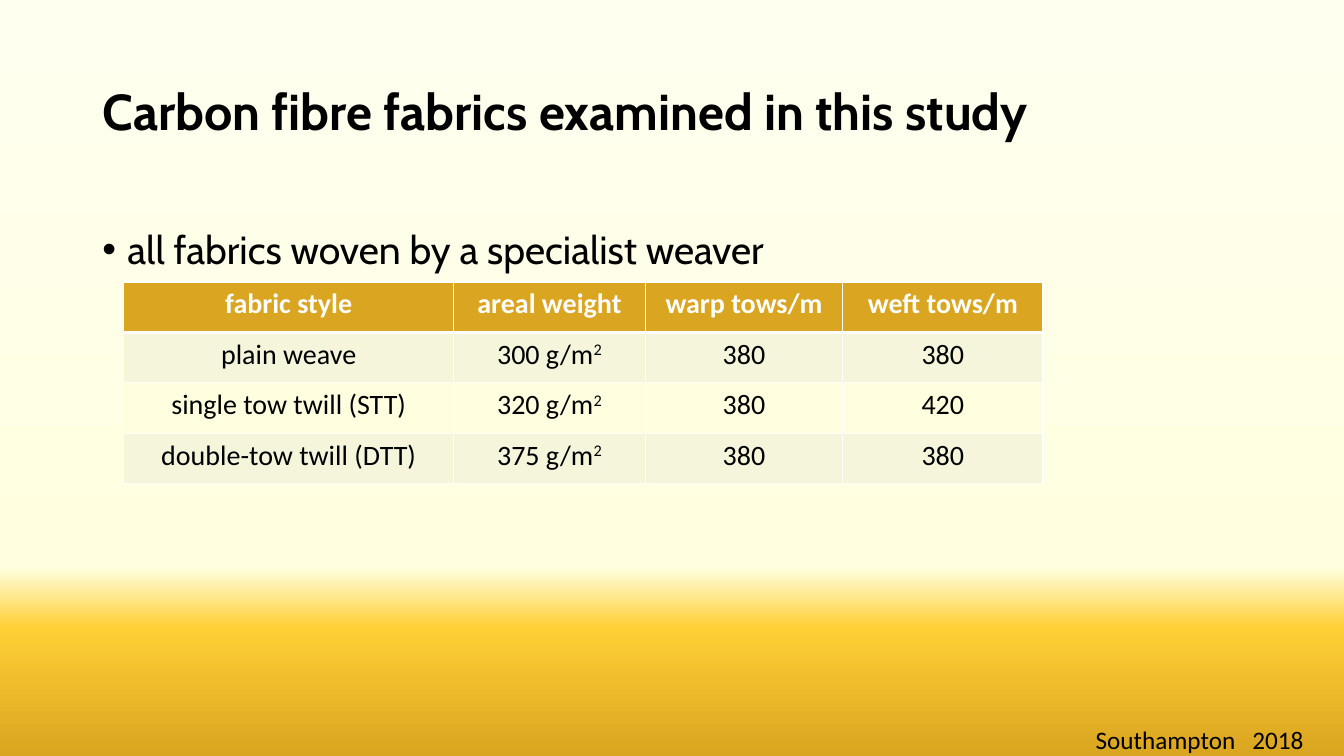
import pptx
import pptx.dml.color
import pptx.enum.text
import pptx.oxml
import pptx.oxml.ns
import pptx.util
from lxml import etree

Pt = pptx.util.Pt
qn = pptx.oxml.ns.qn
ALIGN = pptx.enum.text.PP_ALIGN

COLORS = {
    "ink": "000000", "white": "FFFFFF", "gold": "DAA520", "beige": "F5F5DC",
    "ivory": "FFFFF0", "cream": "FFFFE0", "amber": "FFCF36",
}
BACKGROUND_STOPS = [(0, "ivory"), (75, "cream"), (83, "amber"), (100, "gold")]
COLUMN_WIDTHS = [235.5, 137, 141, 143]
ROW_HEIGHT = 36
FABRICS = [
    ("fabric style", "areal weight", "warp tows/m", "weft tows/m"),
    ("plain weave", "300 g/m²", "380", "380"),
    ("single tow twill (STT)", "320 g/m²", "380", "420"),
    ("double-tow twill (DTT)", "375 g/m²", "380", "380"),
]


def rgb(name):
    return pptx.dml.color.RGBColor.from_string(COLORS[name])


def add_run(p, text, font, size, color="ink", bold=False):
    r = p.add_run()
    r.text = text
    r.font.name = font
    r.font.size = Pt(size)
    r.font.bold = bold
    r.font.color.rgb = rgb(color)
    return r


def paint_background(s):
    fill = s.background.fill
    fill.gradient()
    fill.gradient_angle = 270
    stops = s.element.find(".//" + qn("a:gsLst"))
    for stop in list(stops):
        stops.remove(stop)
    for percent, color in BACKGROUND_STOPS:
        stop = etree.SubElement(stops, qn("a:gs"), pos=str(percent * 1000))
        etree.SubElement(stop, qn("a:srgbClr"), val=COLORS[color])


def set_title(s, text):
    sp = s.shapes.title
    sp.left, sp.top, sp.width, sp.height = Pt(66), Pt(29), Pt(828), Pt(104.5)
    tf = sp.text_frame
    tf.vertical_anchor = pptx.enum.text.MSO_ANCHOR.MIDDLE
    p = tf.paragraphs[0]
    p.alignment = ALIGN.LEFT
    p.line_spacing = 0.9
    add_run(p, text, "Cabin", 36, bold=True)


def add_text_box(s, left, top, width, height):
    """Add an empty wrapping text box and return its first paragraph."""
    tf = s.shapes.add_textbox(Pt(left), Pt(top), Pt(width), Pt(height)).text_frame
    tf.word_wrap = True
    return tf.paragraphs[0]


def add_bullet(s, text):
    p = add_text_box(s, 66, 161, 828, 192)
    p.line_spacing = 0.9
    pPr = p._p.get_or_add_pPr()
    pPr.set("marL", str(Pt(18)))
    pPr.set("indent", str(-Pt(18)))
    etree.SubElement(pPr, qn("a:buFont"), typeface="Arial")
    etree.SubElement(pPr, qn("a:buChar"), char="•")
    add_run(p, text, "Cabin", 28)


def add_footer(s, place, year):
    p = add_text_box(s, 775.5, 514, 184.5, 29)
    tabs = etree.SubElement(p._p.get_or_add_pPr(), qn("a:tabLst"))
    etree.SubElement(tabs, qn("a:tab"), pos=str(Pt(112)), algn="l")
    add_run(p, place + "\t" + year, "Calibri", 18)


def add_borders(cell, bottom):
    tcPr = cell._tc.get_or_add_tcPr()
    for side, width in (("L", 1), ("R", 1), ("T", 1), ("B", bottom)):
        ln = etree.SubElement(tcPr, qn("a:ln" + side), w=str(Pt(width)))
        fill = etree.SubElement(ln, qn("a:solidFill"))
        etree.SubElement(fill, qn("a:srgbClr"), val=COLORS["white"])


def fill_cell(cell, text, header, fill):
    add_borders(cell, bottom=3 if header else 1)
    cell.fill.solid()
    cell.fill.fore_color.rgb = rgb(fill)
    p = cell.text_frame.paragraphs[0]
    p.alignment = ALIGN.CENTER
    color = "white" if header else "ink"
    add_run(p, text.rstrip("²"), "Calibri", 20, color, header)
    if text.endswith("²"):
        exponent = add_run(p, "2", "Calibri", 20, color, header)
        exponent.font._element.set("baseline", "30000")


def add_fabric_table(s):
    table = s.shapes.add_table(
        len(FABRICS), len(COLUMN_WIDTHS), Pt(88.5), Pt(201.5),
        Pt(sum(COLUMN_WIDTHS)), Pt(ROW_HEIGHT * len(FABRICS))).table
    for column, width in zip(table.columns, COLUMN_WIDTHS):
        column.width = Pt(width)
    for i, texts in enumerate(FABRICS):
        table.rows[i].height = Pt(ROW_HEIGHT)
        fill = "gold" if i == 0 else ("cream", "beige")[i % 2]
        for j, text in enumerate(texts):
            fill_cell(table.cell(i, j), text, i == 0, fill)


def main():
    prs = pptx.Presentation()
    prs.slide_width, prs.slide_height = Pt(960), Pt(540)
    s = prs.slides.add_slide(prs.slide_layouts[5])
    paint_background(s)
    add_footer(s, "Southampton", "2018")
    set_title(s, "Carbon fibre fabrics examined in this study")
    add_bullet(s, "all fabrics woven by a specialist weaver")
    add_fabric_table(s)
    prs.save("out.pptx")


if __name__ == "__main__":
    main()
